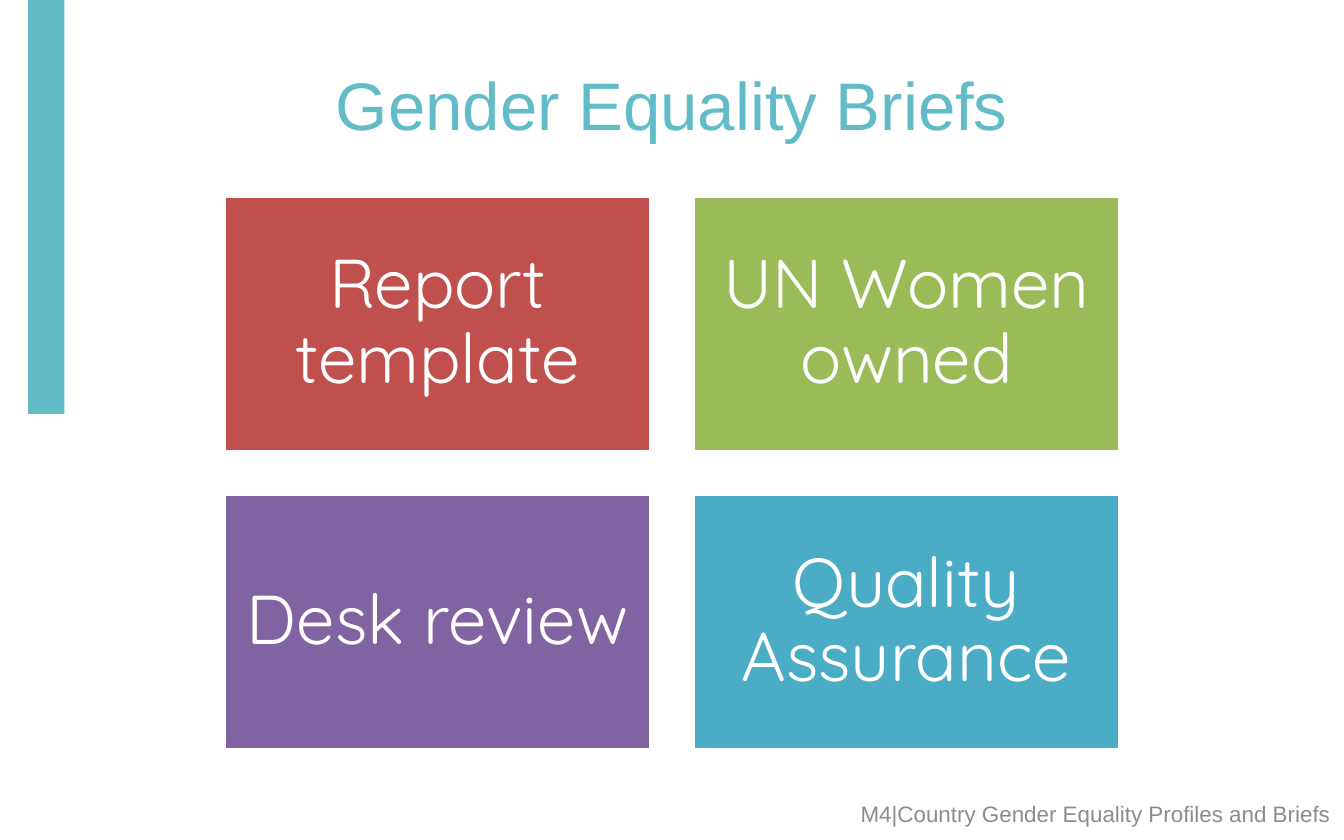
from dataclasses import dataclass

from pptx import Presentation
from pptx.dml.color import RGBColor
from pptx.enum.shapes import MSO_SHAPE
from pptx.enum.text import MSO_ANCHOR, PP_ALIGN
from pptx.util import Inches, Pt


@dataclass(frozen=True)
class Theme:
    accent: str = "62BCC8"
    white: str = "FFFFFF"
    grey: str = "8C8C8C"
    tiles: tuple = ("C0504D", "9BBB59", "8064A2", "4BACC6")
    heading_font: str = "Arial"
    tile_font: str = "Quicksand"
    title_size: int = 36
    tile_size: int = 37
    footer_size: int = 12


theme = Theme()


def add_rect(left, top, width, height, fill, line=None):
    sp = s.shapes.add_shape(MSO_SHAPE.RECTANGLE, Inches(left), Inches(top),
                            Inches(width), Inches(height))
    sp.shadow.inherit = False
    sp.fill.solid()
    sp.fill.fore_color.rgb = RGBColor.from_string(fill)
    if line:
        sp.line.color.rgb = RGBColor.from_string(line)
        sp.line.width = Pt(2)
    else:
        sp.line.fill.background()
    return sp


def write(sp, text, font, size, color, align=PP_ALIGN.CENTER):
    """Set one vertically centred, wrapping paragraph and return it."""
    tf = sp.text_frame
    tf.word_wrap = True
    tf.vertical_anchor = MSO_ANCHOR.MIDDLE
    p = tf.paragraphs[0]
    p.text = text
    p.alignment = align
    r = p.runs[0]
    r.font.name = font
    r.font.size = Pt(size)
    r.font.color.rgb = RGBColor.from_string(color)
    return p


prs = Presentation()
prs.slide_width, prs.slide_height = Inches(10), Inches(6.25)
s = prs.slides.add_slide(prs.slide_layouts[6])

add_rect(0.21, 0, 0.27, 3.08, theme.accent)

title = s.shapes.add_textbox(Inches(0.5), Inches(0.25), Inches(9), Inches(1.04))
write(title, "Gender Equality Briefs", theme.heading_font, theme.title_size, theme.accent)

footer = s.shapes.add_textbox(Inches(3.62), Inches(5.85), Inches(6.38), Inches(0.41))
write(footer, "M4|Country Gender Equality Profiles and Briefs", theme.heading_font,
      theme.footer_size, theme.grey, PP_ALIGN.RIGHT)

# Two-by-two grid of tiles, filled row by row
labels = ("Report template", "UN Women owned", "Desk review", "Quality Assurance")
grid_left, grid_top, tile_w, tile_h, gap = 1.67, 1.46, 3.17, 1.9, 0.32
for i, (label, fill) in enumerate(zip(labels, theme.tiles)):
    row, col = divmod(i, 2)
    tile = add_rect(grid_left + col * (tile_w + gap), grid_top + row * (tile_h + gap),
                    tile_w, tile_h, fill, theme.white)
    p = write(tile, label, theme.tile_font, theme.tile_size, theme.white)
    p.line_spacing = 0.9
    tf = tile.text_frame
    tf.margin_left = tf.margin_right = tf.margin_top = tf.margin_bottom = Inches(0.15)

prs.save("out.pptx")
